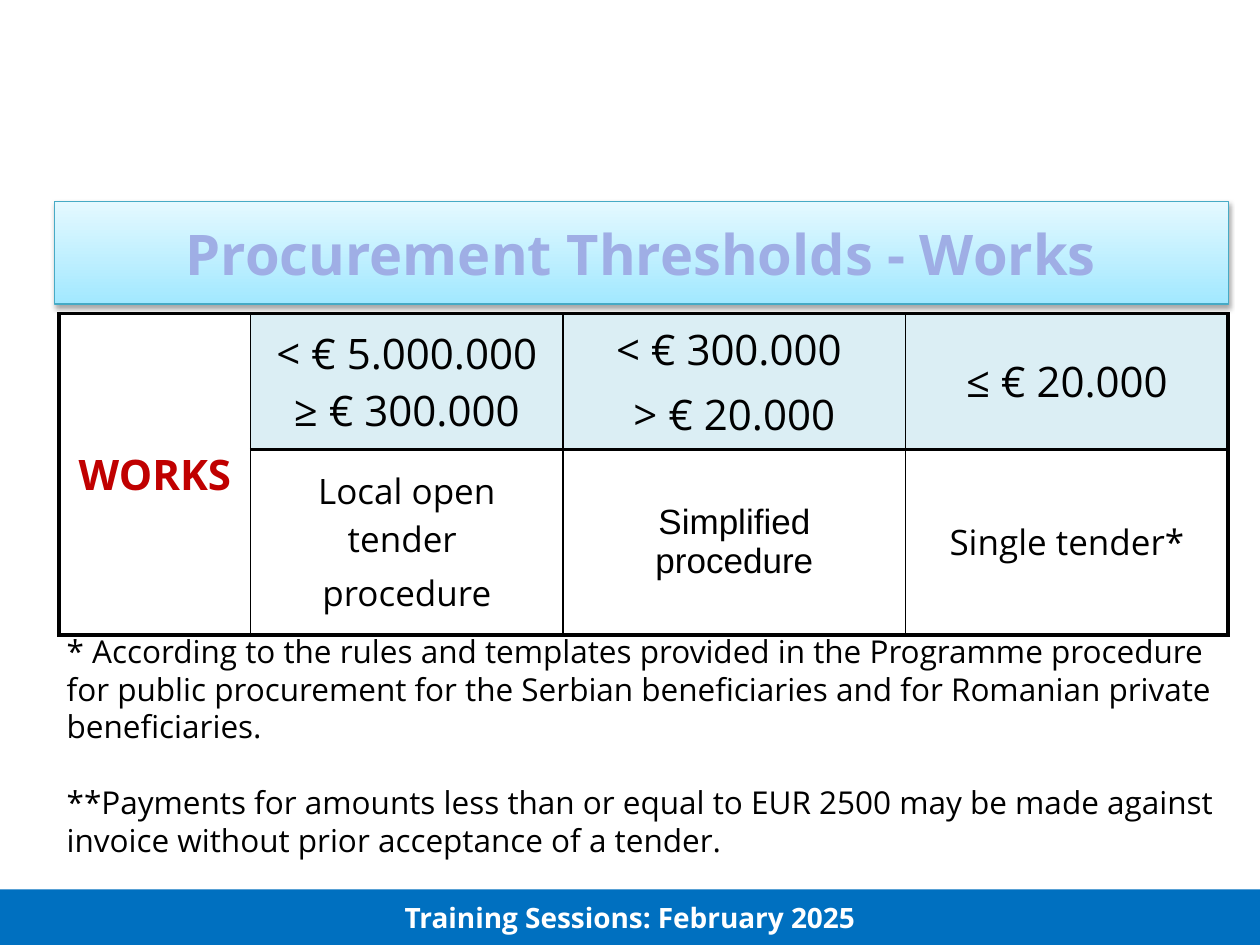
"""Build the slide on procurement thresholds for works."""
import lxml.etree
import pptx
import pptx.dml.color
import pptx.enum.shapes
import pptx.enum.text
import pptx.oxml
import pptx.oxml.ns
import pptx.util

Pt = pptx.util.Pt
RGBColor = pptx.dml.color.RGBColor
CENTER = pptx.enum.text.PP_ALIGN.CENTER
LEFT = pptx.enum.text.PP_ALIGN.LEFT
MIDDLE = pptx.enum.text.MSO_ANCHOR.MIDDLE

BLACK = RGBColor(0x00, 0x00, 0x00)
WHITE = RGBColor(0xFF, 0xFF, 0xFF)
BLUE = RGBColor(0x00, 0x70, 0xC0)
LAVENDER = RGBColor(0x9F, 0xAE, 0xE5)
RED = RGBColor(0xC0, 0x00, 0x00)
PALE_BLUE = RGBColor(0xDB, 0xEE, 0xF4)
TITLE_TOP = RGBColor(0xE4, 0xF9, 0xFF)
TITLE_BOTTOM = RGBColor(0xA2, 0xE8, 0xFF)
TITLE_LINE = RGBColor(0x46, 0xAA, 0xC5)

FONT = "Open Sans"
THICK, THIN = 2.25, 1
COLUMN_WIDTHS = (109.4, 178.6, 195.8, 184.3)
ROW_HEIGHTS = (57, 106)
THRESHOLDS = ("< € 5.000.000 ≥ € 300.000", "< € 300.000 \n> € 20.000", "≤ € 20.000")
PROCEDURES = ("Local open tender \nprocedure", "Simplified procedure", "Single tender*")
NOTES = (
    "* According to the rules and templates provided in the Programme procedure for public "
    "procurement for the Serbian beneficiaries and for Romanian private beneficiaries.\n"
    "**Payments for amounts less than or equal to EUR 2500 may be made against invoice "
    "without prior acceptance of a tender."
)


def write(frame, text, size, color=BLACK, bold=False, font=FONT, align=CENTER, gap=0, leading=None):
    """Fill a text frame, with a gap before every paragraph but the first."""
    frame.text = text
    frame.word_wrap = True
    frame.vertical_anchor = MIDDLE
    for index, para in enumerate(frame.paragraphs):
        para.alignment = align
        para.space_before = Pt(gap if index else 0)
        if leading:
            para.line_spacing = Pt(leading)
        for span in para.runs:
            span.font.name = font
            span.font.size = Pt(size)
            span.font.bold = bold
            span.font.color.rgb = color


def place(box, left, top, width, height):
    """Move and size a shape in points."""
    box.left, box.top, box.width, box.height = map(Pt, (left, top, width, height))


def add_title(page):
    """Format the title placeholder as a shaded banner."""
    title = page.shapes.title
    place(title, 31, 115.2, 671, 58.5)
    title.fill.gradient()
    title.fill.gradient_angle = 270
    for stop, color in zip(title.fill.gradient_stops, (TITLE_TOP, TITLE_BOTTOM)):
        stop.color.rgb = color
    title.line.color.rgb = TITLE_LINE
    title.line.width = Pt(0.75)
    shadow = pptx.oxml.parse_xml(
        f'<a:effectLst {pptx.oxml.ns.nsdecls("a")}>'
        '<a:outerShdw blurRad="40000" dist="23000" dir="5400000" rotWithShape="0">'
        '<a:srgbClr val="000000"><a:alpha val="35000"/></a:srgbClr>'
        '</a:outerShdw></a:effectLst>'
    )
    title.element.spPr.append(shadow)
    write(title.text_frame, "Procurement Thresholds - Works", 32, LAVENDER, True)


def set_borders(cell, widths):
    """Draw black cell borders, given as a width for each side."""
    properties = cell._tc.get_or_add_tcPr()
    for side, width in widths.items():
        line = lxml.etree.SubElement(
            properties, pptx.oxml.ns.qn(f"a:ln{side}"), w=str(Pt(width)))
        fill = lxml.etree.SubElement(line, pptx.oxml.ns.qn("a:solidFill"))
        lxml.etree.SubElement(fill, pptx.oxml.ns.qn("a:srgbClr"), val=str(BLACK))


def add_thresholds_table(page):
    """Add the table of thresholds above their procedures."""
    frame = page.shapes.add_table(
        2, 4, Pt(33.8), Pt(179.3), Pt(sum(COLUMN_WIDTHS)), Pt(sum(ROW_HEIGHTS)))
    table = frame.table
    table.first_row = table.horz_banding = False
    for column, width in zip(table.columns, COLUMN_WIDTHS):
        column.width = Pt(width)
    for row, height in zip(table.rows, ROW_HEIGHTS):
        row.height = Pt(height)
    table.cell(0, 0).merge(table.cell(1, 0))
    last = len(COLUMN_WIDTHS) - 1
    for row in range(2):
        for column in range(last + 1):
            cell = table.cell(row, column)
            set_borders(cell, {
                "L": THIN if column else THICK,
                "R": THICK if column == last else THIN,
                "T": THICK,
                "B": THICK,
            })
            cell.fill.background()
    write_cell(table.cell(0, 0), "WORKS", 24, color=RED, bold=True)
    for column, (threshold, procedure) in enumerate(zip(THRESHOLDS, PROCEDURES), 1):
        top = table.cell(0, column)
        top.fill.solid()
        top.fill.fore_color.rgb = PALE_BLUE
        write_cell(top, threshold, 24)
        write_cell(table.cell(1, column), procedure, 20, font="Arial" if column == 2 else FONT)


def write_cell(cell, text, size, **style):
    """Write centred text in a table cell."""
    write(cell.text_frame, text, size, gap=size / 5, **style)
    cell.vertical_anchor = MIDDLE


def add_notes(page):
    """Add the two remarks below the table."""
    box = page.shapes.add_textbox(Pt(31), Pt(375.1), Pt(671), Pt(123.1))
    write(box.text_frame, NOTES, 18, align=LEFT, gap=21.6, leading=21.6)
    box.text_frame.margin_bottom = Pt(25.2)


def add_footer(page):
    """Add the blue band at the foot of the slide."""
    band = page.shapes.add_shape(
        pptx.enum.shapes.MSO_SHAPE.RECTANGLE, Pt(0), Pt(508.3), Pt(720), Pt(31.7))
    band.shadow.inherit = False
    band.fill.solid()
    band.fill.fore_color.rgb = BLUE
    band.line.fill.background()
    write(band.text_frame, "Training Sessions: February 2025", 16, WHITE, True)


def main():
    """Build and save the deck."""
    deck = pptx.Presentation()
    deck.slide_width, deck.slide_height = Pt(720), Pt(540)
    page = deck.slides.add_slide(deck.slide_layouts[5])
    add_footer(page)
    add_title(page)
    add_thresholds_table(page)
    add_notes(page)
    deck.save("out.pptx")


if __name__ == "__main__":
    main()
